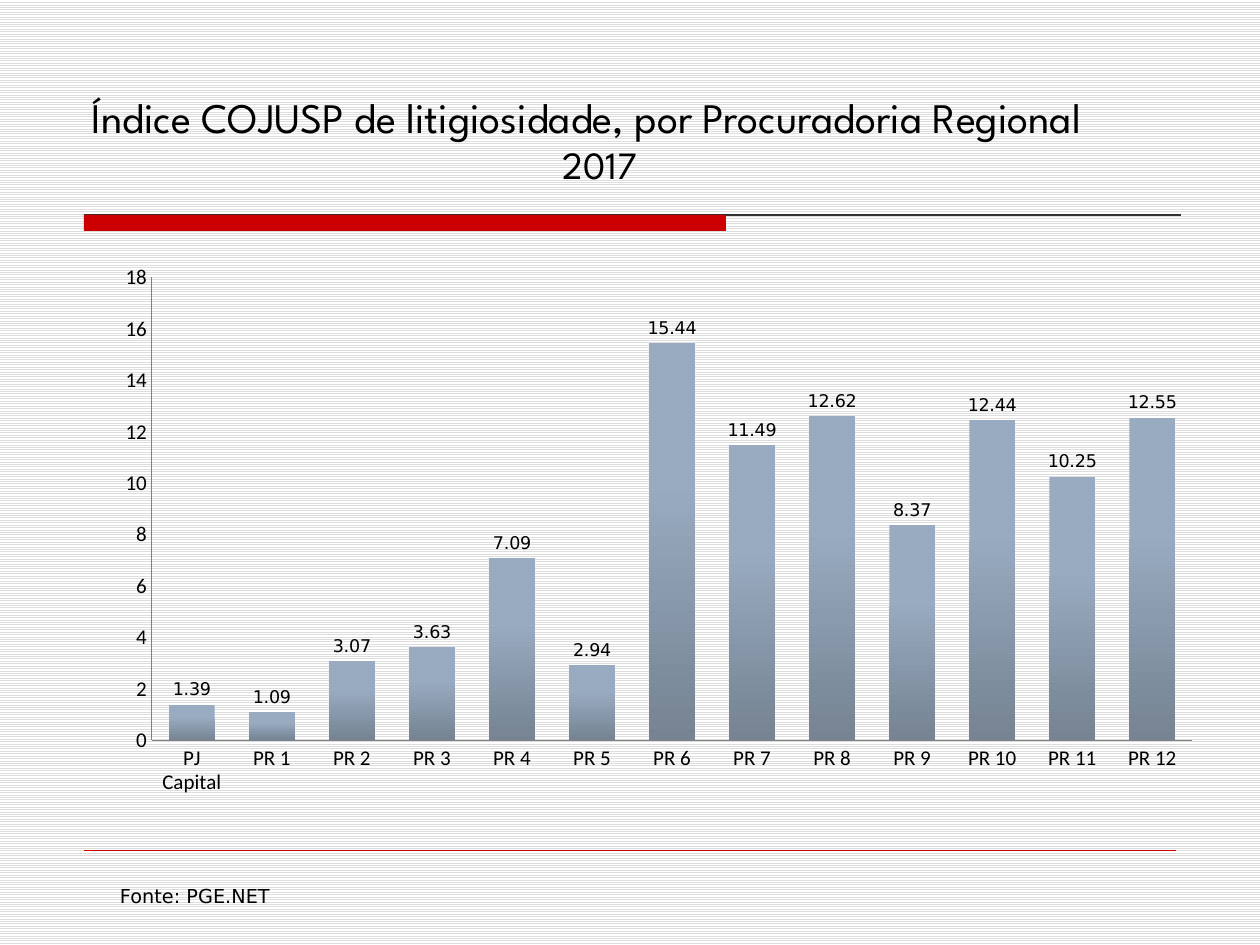
from lxml.etree import SubElement
from pptx import Presentation
from pptx.chart.data import CategoryChartData
from pptx.dml.color import RGBColor
from pptx.enum.chart import XL_CHART_TYPE as ChartType, XL_LABEL_POSITION as LabelPosition
from pptx.enum.chart import XL_TICK_MARK as TickMark
from pptx.enum.dml import MSO_PATTERN as Pattern
from pptx.enum.shapes import MSO_CONNECTOR as Connector, MSO_SHAPE as Shape
from pptx.enum.text import MSO_ANCHOR as Anchor, MSO_AUTO_SIZE as AutoSize, PP_ALIGN as Align
from pptx.oxml.ns import qn
from pptx.util import Emu, Pt

BLACK = RGBColor(0x00, 0x00, 0x00)
WHITE = RGBColor(0xFF, 0xFF, 0xFF)
STRIPE = RGBColor(0xDD, 0xDD, 0xDD)
RED = RGBColor(0xCC, 0x00, 0x00)
RULE = RGBColor(0x33, 0x33, 0x33)
AXIS = RGBColor(0x80, 0x80, 0x80)
BAR_TOP = RGBColor(0x99, 0xAB, 0xC1)
BAR_BOTTOM = RGBColor(0x75, 0x83, 0x92)

TITLE_FONT, AXIS_FONT, BODY_FONT = "League Spartan", "Calibri", "DejaVu Sans"

INDICES = {
    "PJ Capital": 1.39, "PR 1": 1.09, "PR 2": 3.07, "PR 3": 3.63, "PR 4": 7.09,
    "PR 5": 2.94, "PR 6": 15.44, "PR 7": 11.49, "PR 8": 12.62, "PR 9": 8.37,
    "PR 10": 12.44, "PR 11": 10.25, "PR 12": 12.55,
}


def px(length):
    return Emu(round(length * 914400 / 126))


def style_font(font, name, size):
    font.name, font.size, font.color.rgb = name, Pt(size), BLACK


class SlideBuilder:
    """Holds the slide in work and draws styled elements on it, in px."""

    def __init__(self, slide):
        self.slide = slide

    def background(self):
        fill = self.slide.background.fill
        fill.patterned()
        fill.pattern = Pattern.LIGHT_HORIZONTAL
        fill.fore_color.rgb, fill.back_color.rgb = STRIPE, WHITE

    def title(self, left, top, width, height, lines):
        """Lines are (text, size, left margin) triples."""
        title = self.slide.shapes.title
        title.left, title.top, title.width, title.height = map(px, (left, top, width, height))
        frame = title.text_frame
        frame.text = "\n".join(text for text, _, _ in lines)
        frame.auto_size, frame.vertical_anchor = AutoSize.NONE, Anchor.BOTTOM
        for paragraph, (_, size, margin) in zip(frame.paragraphs, lines):
            paragraph.alignment = Align.LEFT
            paragraph._p.get_or_add_pPr().set("marL", str(px(margin)))
            style_font(paragraph.runs[0].font, TITLE_FONT, size)

    def bar(self, left, top, width, height, color):
        bar = self.slide.shapes.add_shape(Shape.RECTANGLE, *map(px, (left, top, width, height)))
        bar.shadow.inherit = False
        bar.fill.solid()
        bar.fill.fore_color.rgb = color
        bar.line.fill.background()

    def rule(self, left, right, y, color, weight):
        rule = self.slide.shapes.add_connector(Connector.STRAIGHT, *map(px, (left, y, right, y)))
        rule.line.color.rgb, rule.line.width = color, Pt(weight)
        SubElement(rule._element.spPr, qn("a:effectLst"))

    def label(self, left, top, width, height, text, size):
        box = self.slide.shapes.add_textbox(*map(px, (left, top, width, height)))
        frame = box.text_frame
        frame.text = text
        frame.word_wrap, frame.auto_size = False, AutoSize.SHAPE_TO_FIT_TEXT
        frame.paragraphs[0].alignment = Align.CENTER
        style_font(frame.paragraphs[0].runs[0].font, BODY_FONT, size)

    def column_chart(self, left, top, width, height, values, maximum, step):
        data = CategoryChartData()
        data.categories = list(values)
        data.add_series("Series 1", list(values.values()))
        chart = self.slide.shapes.add_chart(
            ChartType.COLUMN_CLUSTERED, *map(px, (left, top, width, height)), data).chart
        chart.has_legend = chart.has_title = False
        style_font(chart.font, BODY_FONT, 10)

        for axis in (chart.category_axis, chart.value_axis):
            axis.has_major_gridlines = False
            axis.major_tick_mark = axis.minor_tick_mark = TickMark.NONE
            axis.format.line.color.rgb = AXIS
            style_font(axis.tick_labels.font, AXIS_FONT, 12)
        chart.value_axis.minimum_scale, chart.value_axis.maximum_scale = 0, maximum
        chart.value_axis.major_unit = step
        chart.value_axis.tick_labels.number_format = "#,##0"
        chart.value_axis.tick_labels.number_format_is_linked = False

        plot = chart.plots[0]
        plot.gap_width, plot.vary_by_categories = 75, False
        plot.has_data_labels = True
        labels = plot.data_labels
        labels.show_value, labels.position = True, LabelPosition.OUTSIDE_END
        labels.number_format, labels.number_format_is_linked = "0.00", False
        style_font(labels.font, BODY_FONT, 10)

        fill = plot.series[0].format.fill
        fill.gradient()
        fill.gradient_angle = 270
        for stop, color, position in zip(fill.gradient_stops, (BAR_TOP, BAR_BOTTOM), (0.35, 1)):
            stop.color.rgb, stop.position = color, position
        self.place_plot(chart, x=0.06, y=0.02, w=0.92, h=0.82)

    @staticmethod
    def place_plot(chart, **fractions):
        """Fixes the inner plot area as fractions of the chart."""
        plot_area = chart._chartSpace.chart.plotArea
        layout = plot_area.find(qn("c:layout"))
        if layout is None:
            layout = SubElement(plot_area, qn("c:layout"))
            plot_area.insert(0, layout)
        manual = SubElement(layout, qn("c:manualLayout"))
        settings = {"layoutTarget": "inner", "xMode": "edge", "yMode": "edge", **fractions}
        for name, value in settings.items():
            SubElement(manual, qn(f"c:{name}")).set("val", str(value))


def main():
    presentation = Presentation()
    presentation.slide_width, presentation.slide_height = px(1260), px(945)
    builder = SlideBuilder(presentation.slides.add_slide(presentation.slide_layouts[5]))
    builder.background()
    builder.rule(84, 1181, 215, RULE, 0.75)
    builder.bar(84, 215, 642, 16, RED)
    builder.rule(84, 1176, 850, RED, 0.25)
    builder.title(79, 42, 1103, 152, [
        ("Índice COJUSP de litigiosidade, por Procuradoria Regional", 24, 0),
        ("2017", 22, 471),
    ])
    builder.column_chart(84, 265, 1131, 566, INDICES, maximum=18, step=2)
    builder.label(101, 878, 188, 37, "Fonte: PGE.NET", 11)
    presentation.save("out.pptx")


if __name__ == "__main__":
    main()
